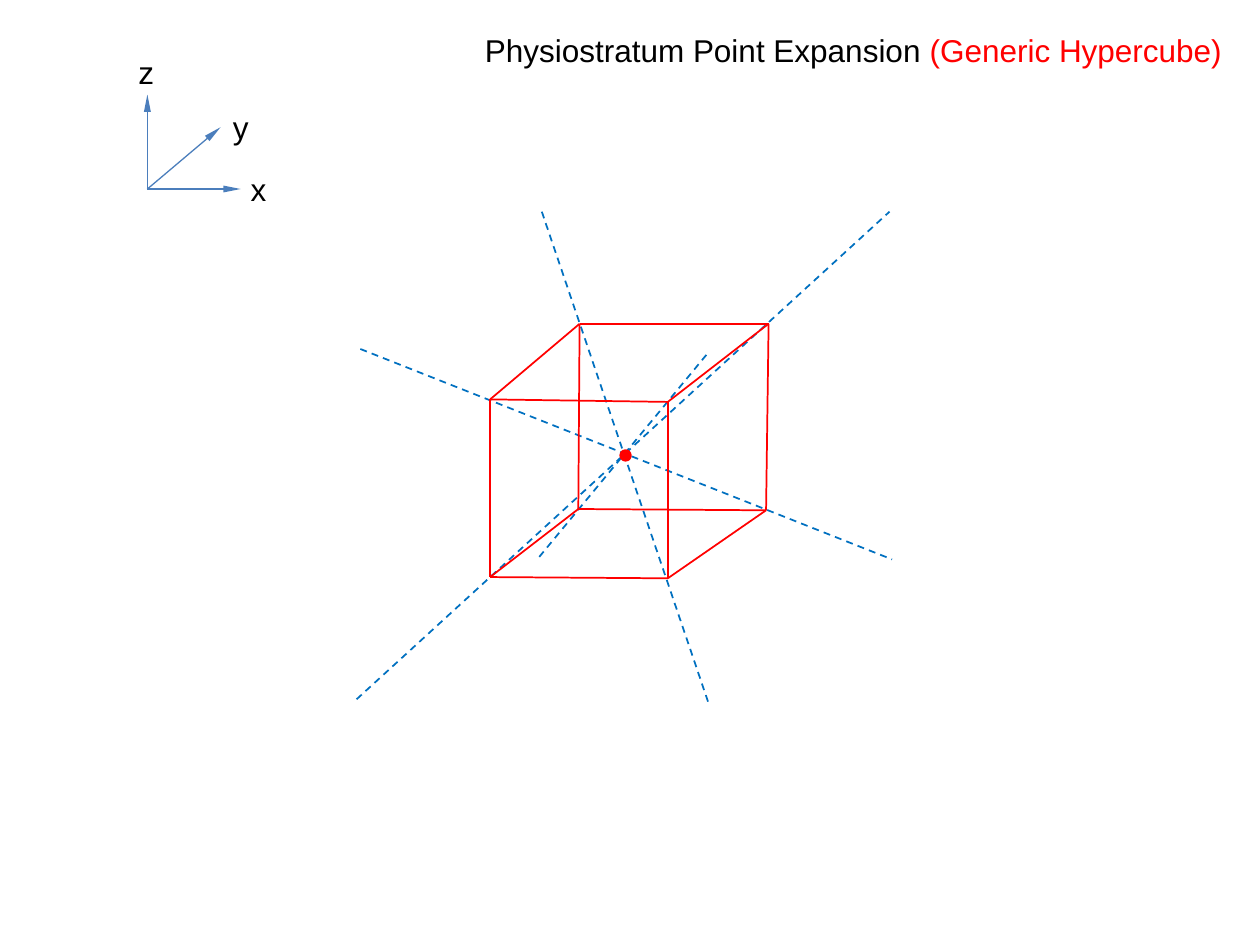
from lxml import etree
from pptx import Presentation
from pptx.dml.color import RGBColor
from pptx.enum.dml import MSO_LINE
from pptx.enum.shapes import MSO_CONNECTOR, MSO_SHAPE
from pptx.enum.text import MSO_AUTO_SIZE
from pptx.oxml.ns import qn
from pptx.util import Inches, Pt

STRAIGHT = MSO_CONNECTOR.STRAIGHT
OVAL = MSO_SHAPE.OVAL
DASH = MSO_LINE.DASH
GROW = MSO_AUTO_SIZE.SHAPE_TO_FIT_TEXT

BLACK, RED, BLUE, AXIS_BLUE = "000000", "FF0000", "0070C0", "4B7EBC"

DIAGONALS = [
    ((4.3, 1.68), (5.62, 5.57)),
    ((2.83, 5.55), (7.06, 1.68)),
    ((2.86, 2.77), (7.08, 4.44)),
    ((4.28, 4.42), (5.62, 2.8)),
]

# Corners of each face: bottom left, bottom right, top right, top left
FRONT = [(3.89, 4.58), (5.3, 4.59), (5.3, 3.19), (3.89, 3.17)]
BACK = [(4.59, 4.04), (6.08, 4.05), (6.1, 2.57), (4.6, 2.57)]

AXIS_ORIGIN = (1.17, 1.5)
# Axis name, arrow tip, label position
AXES = [
    ("x", (1.91, 1.5), (1.89, 1.3)),
    ("y", (1.75, 1.01), (1.75, 0.81)),
    ("z", (1.17, 0.75), (1.0, 0.37)),
]


def rgb(hex_color):
    return RGBColor.from_string(hex_color)


def add_line(slide, start, end, color, width=1, dash=None, arrow=False):
    ends = [Inches(value) for value in (*start, *end)]
    connector = slide.shapes.add_connector(STRAIGHT, *ends)
    stroke = connector.line
    stroke.color.rgb = rgb(color)
    for name, value in {"width": Pt(width), "dash_style": dash}.items():
        setattr(stroke, name, value)
    if arrow:
        etree.SubElement(stroke._get_or_add_ln(), qn("a:tailEnd"),
                         type="triangle", w="sm", len="lg")
    etree.SubElement(connector._element.spPr, qn("a:effectLst"))


def add_label(slide, position, width, runs):
    box = slide.shapes.add_textbox(*map(Inches, (*position, width, 0.4)))
    frame = box.text_frame
    for name, value in {"word_wrap": True, "auto_size": GROW}.items():
        setattr(frame, name, value)
    for text, color in runs:
        run = frame.paragraphs[0].add_run()
        run.text = text
        for name, value in {"name": "Arial", "size": Pt(18)}.items():
            setattr(run.font, name, value)
        run.font.color.rgb = rgb(color)


def add_center_point(slide, left, top, diameter):
    point = slide.shapes.add_shape(
        OVAL, *map(Inches, (left, top, diameter, diameter)))
    point.shadow.inherit = False
    point.fill.solid()
    point.fill.fore_color.rgb = rgb(RED)
    point.line.color.rgb = rgb(RED)
    point.line.width = Pt(2)


def add_cube(slide):
    for i in range(4):
        following = (i + 1) % 4
        add_line(slide, BACK[i], BACK[following], RED)
        add_line(slide, FRONT[i], BACK[i], RED)
        add_line(slide, FRONT[i], FRONT[following], RED)


def main():
    prs = Presentation()
    prs.slide_width, prs.slide_height = Inches(10), Inches(7.5)
    slide = prs.slides.add_slide(prs.slide_layouts[6])

    # Expansion directions through the cube's corners
    for start, end in DIAGONALS:
        add_line(slide, start, end, BLUE, dash=DASH)

    # Cube and the point it expands from
    add_cube(slide)
    add_center_point(slide, 4.93, 3.58, 0.07)

    # Coordinate axes
    for name, tip, label_position in AXES:
        add_line(slide, AXIS_ORIGIN, tip, AXIS_BLUE, 0.75, arrow=True)
        add_label(slide, label_position, 0.25, [(name, BLACK)])

    # Title
    add_label(slide, (3.75, 0.2), 6.17, [
        ("Physiostratum Point Expansion ", BLACK),
        ("(Generic Hypercube)", RED),
    ])

    prs.save("out.pptx")


if __name__ == "__main__":
    main()
